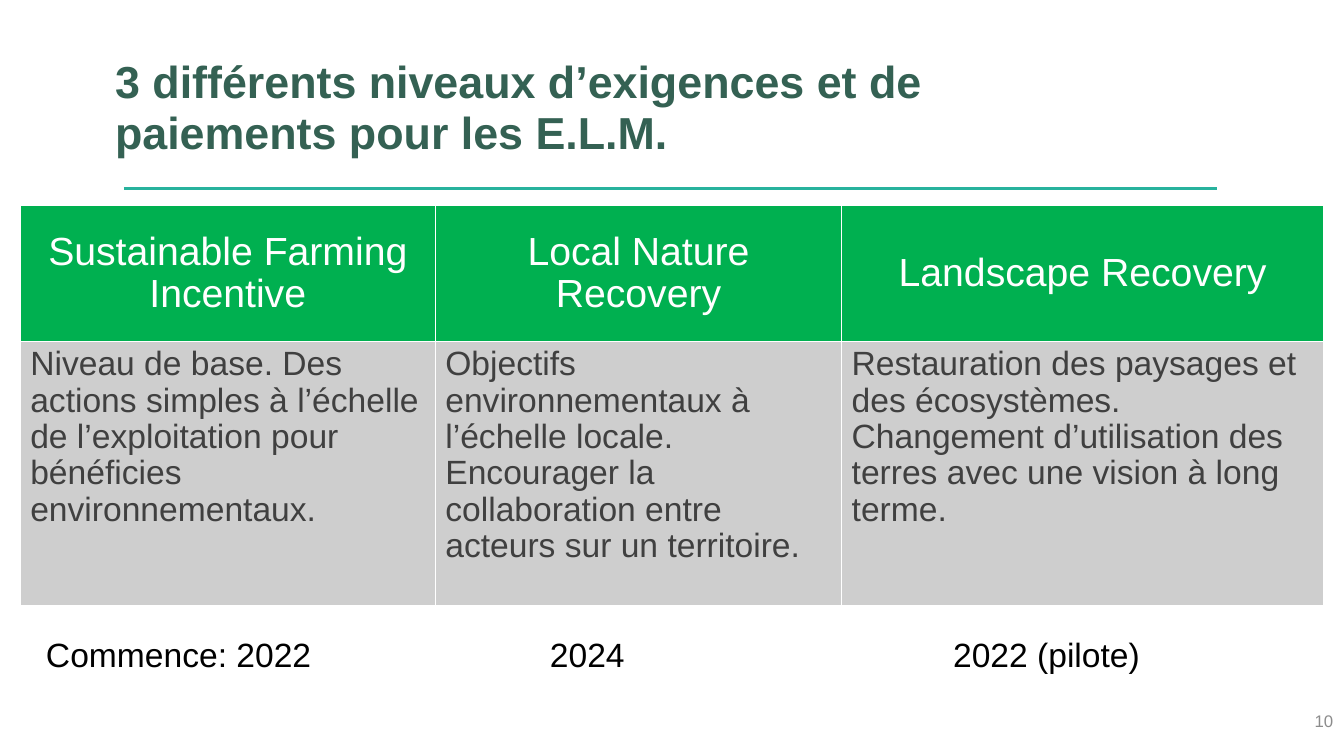
from dataclasses import dataclass

import pptx
import pptx.dml.color
import pptx.enum.shapes
import pptx.enum.text
import pptx.oxml.ns
import pptx.util
from lxml import etree

Cm = pptx.util.Cm
Pt = pptx.util.Pt
ALIGN = pptx.enum.text.PP_ALIGN
ANCHOR = pptx.enum.text.MSO_ANCHOR
qn = pptx.oxml.ns.qn


@dataclass(frozen=True)
class Theme:
    font: str = "Arial"
    title: str = "346153"
    rule: str = "28B29D"
    header_fill: str = "00B050"
    body_fill: str = "CECECE"
    body_text: str = "404040"
    number: str = "8C8C8C"
    white: str = "FFFFFF"
    black: str = "000000"
    title_size: int = 32
    header_size: int = 28
    body_size: int = 24
    number_size: int = 12


THEME = Theme()

LEVELS = [
    ("Sustainable Farming Incentive", 10.46,
     "Niveau de base. Des actions simples à l’échelle de l’exploitation "
     "pour bénéficies environnementaux."),
    ("Local Nature Recovery", 10.24,
     "Objectifs environnementaux à l’échelle locale. Encourager la "
     "collaboration entre acteurs sur un territoire."),
    ("Landscape Recovery", 12.14,
     "Restauration des paysages et des écosystèmes. Changement "
     "d’utilisation des terres avec une vision à long terme."),
]
ROW_HEIGHTS = [3.43, 6.65]


def rgb(value):
    return pptx.dml.color.RGBColor.from_string(value)


def write(tf, text, size, color, align=ALIGN.LEFT, bold=False):
    p = tf.paragraphs[0]
    p.alignment = align
    r = p.add_run()
    r.text = text
    r.font.name = THEME.font
    r.font.size = Pt(size)
    r.font.bold = bold
    r.font.color.rgb = rgb(color)
    return p


def set_title(s, text):
    sp = s.shapes.title
    sp.left, sp.top, sp.width, sp.height = Cm(2.9), Cm(1.45), Cm(25.25), Cm(2.57)
    tf = sp.text_frame
    tf.word_wrap = True
    tf.vertical_anchor = ANCHOR.TOP
    tf.margin_left = tf.margin_right = tf.margin_top = tf.margin_bottom = 0
    p = write(tf, text, THEME.title_size, THEME.title, bold=True)
    p.line_spacing = Pt(36)


def add_rule(s, x1, x2, y):
    line = s.shapes.add_connector(
        pptx.enum.shapes.MSO_CONNECTOR.STRAIGHT, Cm(x1), Cm(y), Cm(x2), Cm(y))
    line.line.color.rgb = rgb(THEME.rule)
    line.line.width = Pt(1.5)
    etree.SubElement(line._element.spPr, qn("a:effectLst"))


def add_text(s, x, y, w, h, text, size, color, align=ALIGN.LEFT,
             anchor=ANCHOR.TOP, tabs=()):
    sp = s.shapes.add_textbox(Cm(x), Cm(y), Cm(w), Cm(h))
    tf = sp.text_frame
    tf.word_wrap = True
    tf.vertical_anchor = anchor
    if tabs:
        pPr = tf.paragraphs[0]._p.get_or_add_pPr()
        stops = etree.SubElement(pPr, qn("a:tabLst"))
        for pos in tabs:
            etree.SubElement(stops, qn("a:tab"), pos=str(int(Cm(pos))), algn="l")
    write(tf, text, size, color, align)


def set_borders(cell, color, width):
    tcPr = cell._tc.get_or_add_tcPr()
    for i, side in enumerate(("a:lnL", "a:lnR", "a:lnT", "a:lnB")):
        ln = etree.Element(qn(side), w=str(int(Pt(width))))
        fill = etree.SubElement(ln, qn("a:solidFill"))
        etree.SubElement(fill, qn("a:srgbClr"), val=color)
        tcPr.insert(i, ln)


def fill_cell(cell, text, size, color, fill, align, anchor):
    cell.fill.solid()
    cell.fill.fore_color.rgb = rgb(fill)
    cell.vertical_anchor = anchor
    p = write(cell.text_frame, text, size, color, align)
    p.line_spacing = 0.97
    set_borders(cell, THEME.white, 1)


def add_levels_table(s, x, y):
    width = sum(w for _, w, _ in LEVELS)
    table = s.shapes.add_table(len(ROW_HEIGHTS), len(LEVELS), Cm(x), Cm(y),
                               Cm(width), Cm(sum(ROW_HEIGHTS))).table
    table.horz_banding = False
    for row, h in zip(table.rows, ROW_HEIGHTS):
        row.height = Cm(h)
    for i, (name, w, description) in enumerate(LEVELS):
        table.columns[i].width = Cm(w)
        fill_cell(table.cell(0, i), name, THEME.header_size, THEME.white,
                  THEME.header_fill, ALIGN.CENTER, ANCHOR.MIDDLE)
        fill_cell(table.cell(1, i), description, THEME.body_size,
                  THEME.body_text, THEME.body_fill, ALIGN.LEFT, ANCHOR.TOP)


def main():
    prs = pptx.Presentation()
    prs.slide_width, prs.slide_height = Cm(33.87), Cm(19.05)
    s = prs.slides.add_slide(prs.slide_layouts.get_by_name("Title Only"))
    set_title(s, "3 différents niveaux d’exigences et de paiements pour les E.L.M.")
    add_rule(s, 3.12, 30.68, 4.75)
    add_levels_table(s, 0.51, 5.18)
    add_text(s, 0.91, 15.85, 28.65, 1.27, "Commence: 2022\t2024\t2022 (pilote)",
             THEME.body_size, THEME.black, tabs=(12.7, 22.86))
    add_text(s, 32.33, 17.65, 1.52, 1.02, "10", THEME.number_size,
             THEME.number, ALIGN.RIGHT, ANCHOR.MIDDLE)
    prs.save("out.pptx")


if __name__ == "__main__":
    main()
